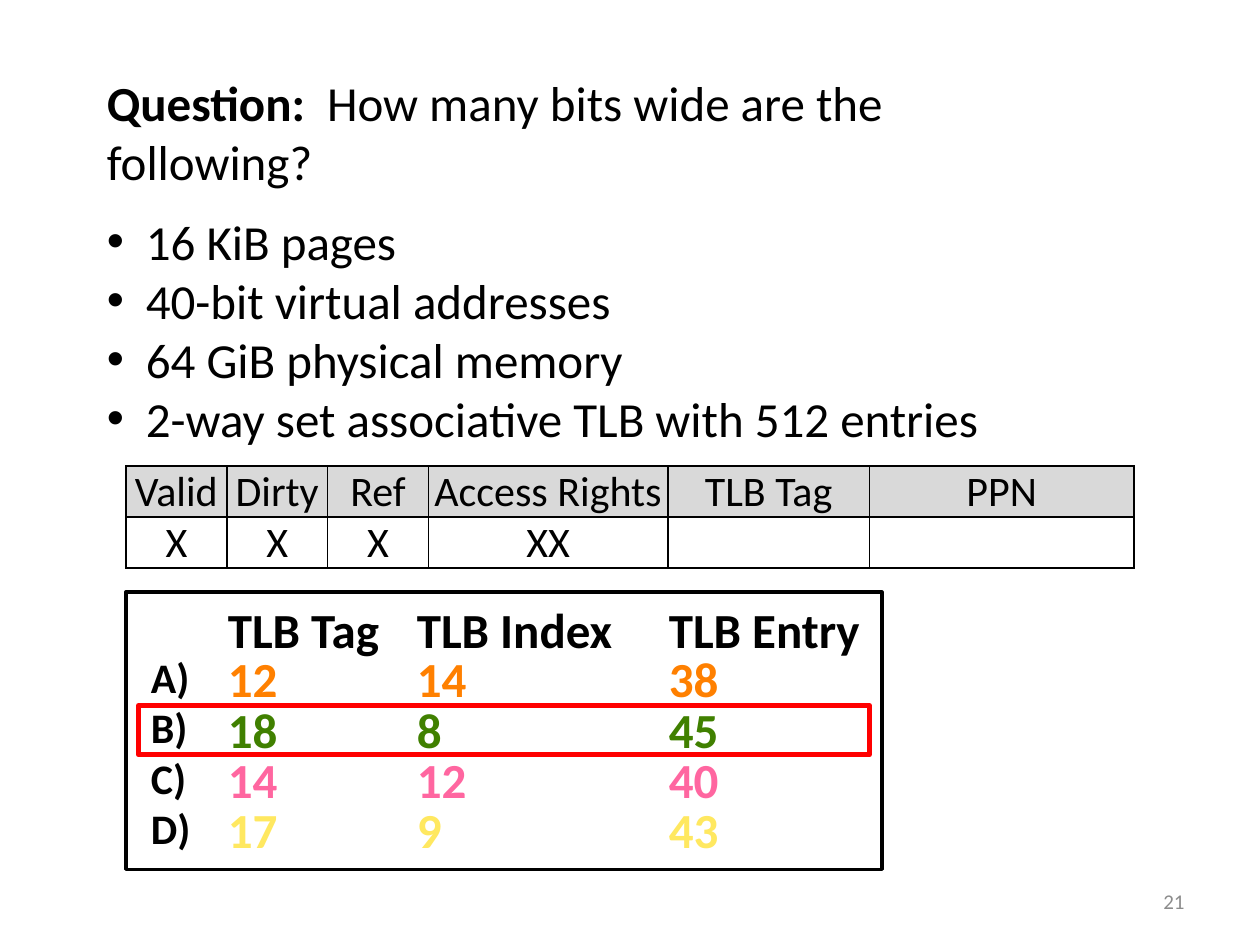
from dataclasses import dataclass

from lxml.etree import SubElement
from pptx import Presentation
from pptx.dml.color import RGBColor
from pptx.enum.shapes import MSO_SHAPE
from pptx.enum.text import MSO_ANCHOR as Anchor, PP_ALIGN as Align
from pptx.oxml.ns import qn
from pptx.util import Inches, Pt

BLACK = "000000"
COLUMN_STOPS = (1.5, 3.5)
ROW_PITCH = 0.4


@dataclass
class Box:
    left: float
    top: float
    width: float
    height: float

    def lengths(self):
        return [Inches(v) for v in (self.left, self.top, self.width, self.height)]


@dataclass
class Choice:
    label: str
    values: tuple
    color: str


CHOICES = [
    Choice("A)", ("12", "14", "38"), "FF8000"),
    Choice("B)", ("18", "8", "45"), "408000"),
    Choice("C)", ("14", "12", "40"), "FF66A0"),
    Choice("D)", ("17", "9", "43"), "FFE860"),
]
FACTS = [
    "16 KiB pages",
    "40-bit virtual addresses",
    "64 GiB physical memory",
    "2-way set associative TLB with 512 entries",
]
ENTRY_ROWS = [
    ("Valid", "Dirty", "Ref", "Access Rights", "TLB Tag", "PPN"),
    ("X", "X", "X", "XX", "", ""),
]
ENTRY_WIDTHS = (0.8, 0.8, 0.8, 1.9, 1.6, 2.1)


def rgb(color: str) -> RGBColor:
    return RGBColor.from_string(color)


def style(paragraph, size: float, color: str = BLACK, bold=None) -> None:
    font = paragraph.font
    font.name = "Calibri"
    font.size = Pt(size)
    font.color.rgb = rgb(color)
    font.bold = bold


def add_text(slide, box: Box, text: str, size: float, color: str = BLACK, bold=None):
    frame = slide.shapes.add_textbox(*box.lengths()).text_frame
    frame.word_wrap = True
    paragraph = frame.paragraphs[0]
    paragraph.text = text
    style(paragraph, size, color, bold)
    return frame


def add_bullet(paragraph, indent: float) -> None:
    properties = paragraph._p.get_or_add_pPr()
    properties.set("marL", str(Inches(indent)))
    properties.set("indent", str(-Inches(indent)))
    SubElement(properties, qn("a:buFont"), typeface="Arial")
    SubElement(properties, qn("a:buChar"), char="•")


def add_columns(slide, top: float, values: tuple, color: str = BLACK) -> None:
    frame = add_text(slide, Box(1.71, top, 5.3, 0.57), "\t".join(values), 28, color, True)
    properties = frame.paragraphs[0]._p.get_or_add_pPr()
    tabs = SubElement(properties, qn("a:tabLst"))
    for stop in COLUMN_STOPS:
        SubElement(tabs, qn("a:tab"), pos=str(Inches(stop)), algn="l")


def add_frame(slide, box: Box, color: str, width: float) -> None:
    shape = slide.shapes.add_shape(MSO_SHAPE.RECTANGLE, *box.lengths())
    shape.shadow.inherit = False
    shape.fill.background()
    shape.line.color.rgb = rgb(color)
    shape.line.width = Pt(width)


def add_question(slide) -> None:
    frame = add_text(slide, Box(0.75, 0.53, 8, 3.1), "", 28)
    question = frame.paragraphs[0]
    heading = question.add_run()
    heading.text = "Question:  "
    heading.font.bold = True
    question.add_run().text = "How many bits wide are the following?"
    for index, fact in enumerate(FACTS):
        paragraph = frame.add_paragraph()
        paragraph.text = fact
        style(paragraph, 28)
        if index == 0:
            paragraph.space_before = Pt(12)
        add_bullet(paragraph, 0.31)


def add_borders(cell) -> None:
    properties = cell._tc.get_or_add_tcPr()
    for side in ("a:lnL", "a:lnR", "a:lnT", "a:lnB"):
        line = SubElement(properties, qn(side), w=str(Pt(1)))
        fill = SubElement(line, qn("a:solidFill"))
        SubElement(fill, qn("a:srgbClr"), val=BLACK)


def add_entry_table(slide) -> None:
    box = Box(1, 3.7, sum(ENTRY_WIDTHS), 0.81)
    table = slide.shapes.add_table(len(ENTRY_ROWS), len(ENTRY_WIDTHS), *box.lengths()).table
    table.first_row = table.horz_banding = False
    for column, width in zip(table.columns, ENTRY_WIDTHS):
        column.width = Inches(width)
    for row_index, texts in enumerate(ENTRY_ROWS):
        for column_index, text in enumerate(texts):
            cell = table.cell(row_index, column_index)
            cell.margin_left = cell.margin_right = cell.margin_top = cell.margin_bottom = 0
            add_borders(cell)
            if row_index == 0:
                cell.fill.solid()
                cell.fill.fore_color.rgb = rgb("D9D9D9")
                cell.vertical_anchor = Anchor.MIDDLE
            else:
                cell.fill.background()
            paragraph = cell.text_frame.paragraphs[0]
            paragraph.text = text
            paragraph.alignment = Align.CENTER
            style(paragraph, 24)


def add_choices(slide) -> None:
    for index, choice in enumerate(CHOICES):
        top = 5.1 + index * ROW_PITCH
        add_columns(slide, top, choice.values, choice.color)
        add_text(slide, Box(1.1, top + 0.02, 0.6, 0.5), choice.label, 24, bold=True)
    add_frame(slide, Box(1, 4.7, 6, 2.2), BLACK, 2)
    add_columns(slide, 4.71, ("TLB Tag", "TLB Index", "TLB Entry"))
    add_frame(slide, Box(1.1, 5.6, 5.8, 0.39), "FF0000", 3)


def main() -> None:
    presentation = Presentation()
    presentation.slide_width = Inches(10)
    presentation.slide_height = Inches(7.5)
    slide = presentation.slides.add_slide(presentation.slide_layouts[6])
    add_question(slide)
    add_choices(slide)
    number = add_text(slide, Box(7.17, 6.95, 2.33, 0.4), "21", 12, "8C8C8C")
    number.vertical_anchor = Anchor.MIDDLE
    number.paragraphs[0].alignment = Align.RIGHT
    add_entry_table(slide)
    presentation.save("out.pptx")


if __name__ == "__main__":
    main()
